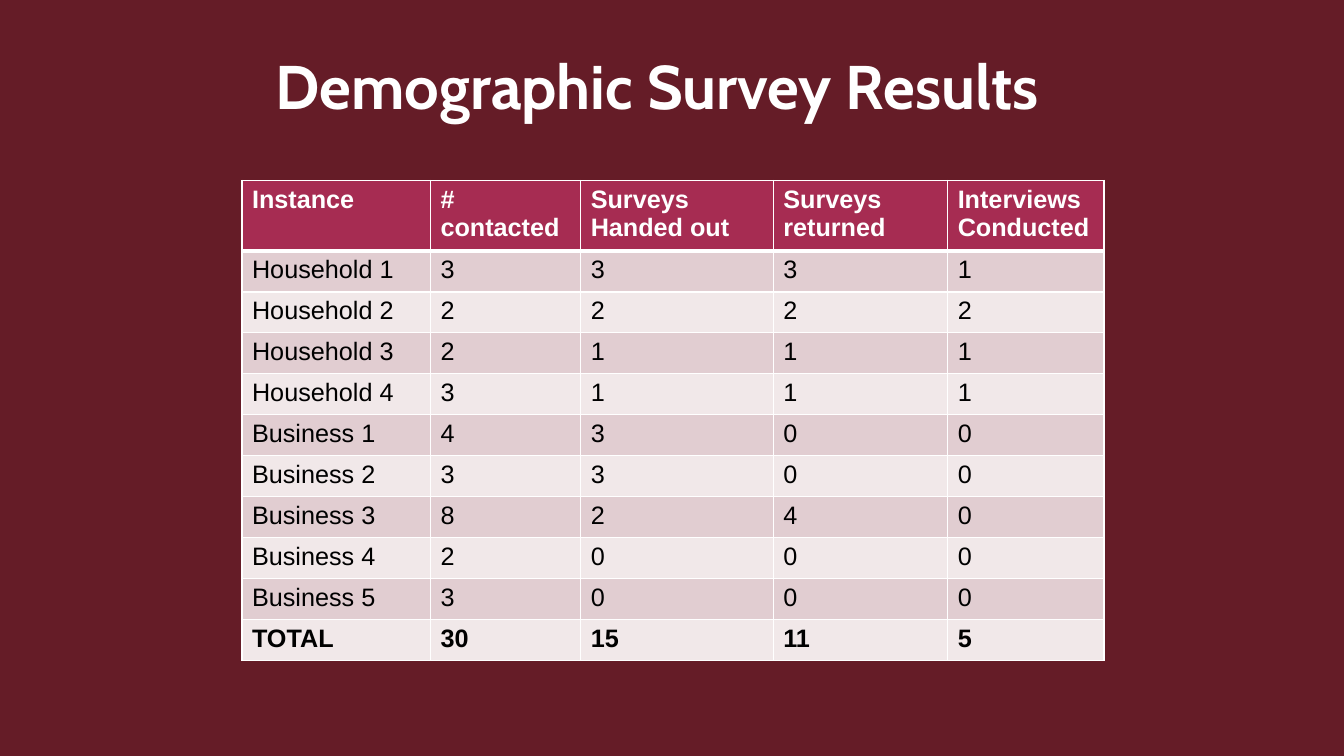
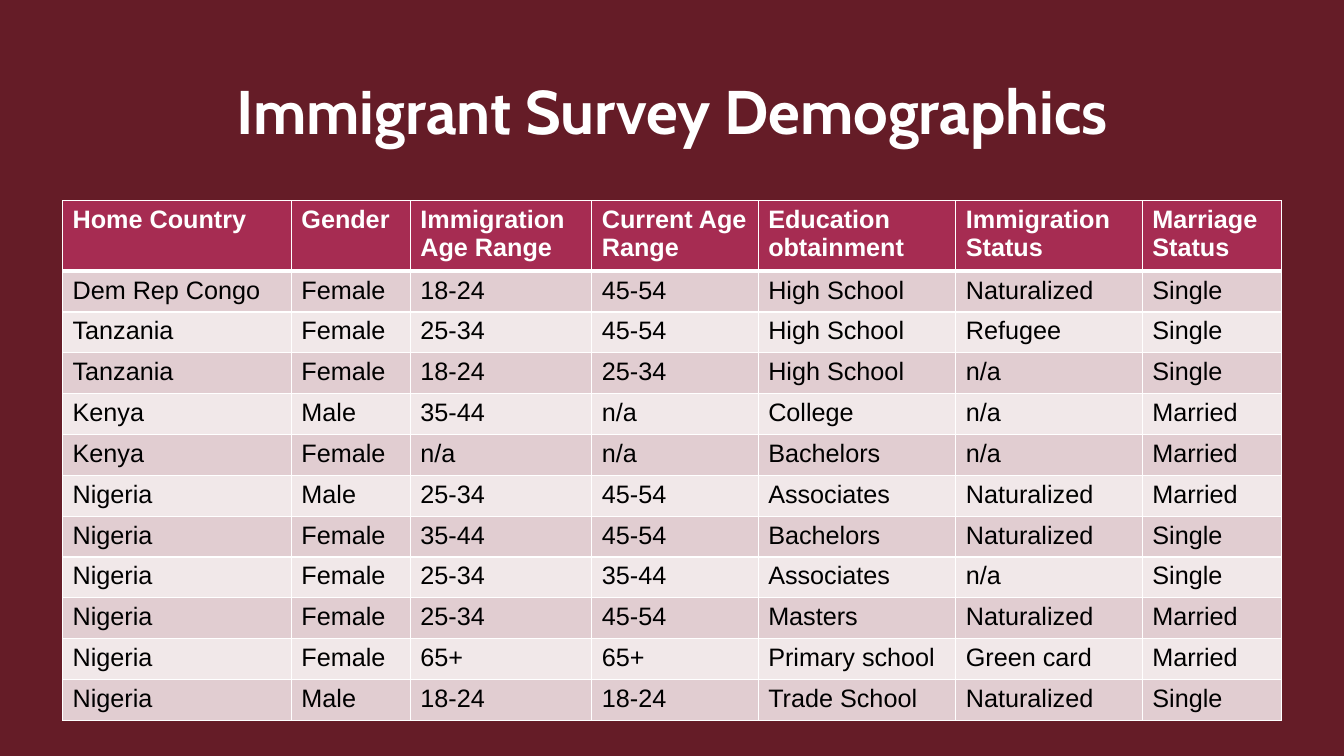
from dataclasses import dataclass

from lxml import etree
from pptx import Presentation
from pptx.dml.color import RGBColor
from pptx.enum.text import MSO_ANCHOR, PP_ALIGN
from pptx.oxml.ns import qn
from pptx.slide import Slide
from pptx.table import _Cell as Cell
from pptx.util import Inches, Pt

BURGUNDY = RGBColor(0x65, 0x1C, 0x27)
CRIMSON = RGBColor(0xA6, 0x2C, 0x52)
ROSE = RGBColor(0xE1, 0xCD, 0xD1)
PALE_ROSE = RGBColor(0xF1, 0xE8, 0xE9)
WHITE = RGBColor(0xFF, 0xFF, 0xFF)
BLACK = RGBColor(0x00, 0x00, 0x00)

TITLE_FONT = "Cabin"
TABLE_FONT = "Arial"
TITLE_WIDTH, TITLE_HEIGHT = 10, 0.86
HEADER_HEIGHT = 0.67
THIN, THICK = Pt(1), Pt(3)


@dataclass(frozen=True)
class TableSlide:
    title: str
    title_left: float
    title_top: float
    table_left: float
    table_top: float
    table_height: float
    column_widths: tuple[float, ...]
    rows: tuple[tuple[str, ...], ...]
    has_total: bool = False


TABLE_SLIDES = (
    TableSlide(
        title="Demographic Survey Results",
        title_left=1.52,
        title_top=0.4,
        table_left=2.4,
        table_top=1.79,
        table_height=4.73,
        column_widths=(1.87, 1.49, 1.91, 1.73, 1.55),
        rows=(
            ("Instance", "# contacted", "Surveys Handed out", "Surveys returned", "Interviews Conducted"),
            ("Household 1", "3", "3", "3", "1"),
            ("Household 2", "2", "2", "2", "2"),
            ("Household 3", "2", "1", "1", "1"),
            ("Household 4", "3", "1", "1", "1"),
            ("Business 1", "4", "3", "0", "0"),
            ("Business 2", "3", "3", "0", "0"),
            ("Business 3", "8", "2", "4", "0"),
            ("Business 4", "2", "0", "0", "0"),
            ("Business 5", "3", "0", "0", "0"),
            ("TOTAL", "30", "15", "11", "5"),
        ),
        has_total=True,
    ),
    TableSlide(
        title="Immigrant Survey Demographics",
        title_left=1.67,
        title_top=0.65,
        table_left=0.62,
        table_top=1.99,
        table_height=5.13,
        column_widths=(2.27, 1.18, 1.8, 1.65, 1.96, 1.85, 1.38),
        rows=(
            ("Home Country", "Gender", "Immigration Age Range", "Current Age Range",
             "Education obtainment", "Immigration Status", "Marriage Status"),
            ("Dem Rep Congo", "Female", "18-24", "45-54", "High School", "Naturalized", "Single"),
            ("Tanzania", "Female", "25-34", "45-54", "High School", "Refugee", "Single"),
            ("Tanzania", "Female", "18-24", "25-34", "High School", "n/a", "Single"),
            ("Kenya", "Male", "35-44", "n/a", "College", "n/a", "Married"),
            ("Kenya", "Female", "n/a", "n/a", "Bachelors", "n/a", "Married"),
            ("Nigeria", "Male", "25-34", "45-54", "Associates", "Naturalized", "Married"),
            ("Nigeria", "Female", "35-44", "45-54", "Bachelors", "Naturalized", "Single"),
            ("Nigeria", "Female", "25-34", "35-44", "Associates", "n/a", "Single"),
            ("Nigeria", "Female", "25-34", "45-54", "Masters", "Naturalized", "Married"),
            ("Nigeria", "Female", "65+", "65+", "Primary school", "Green card", "Married"),
            ("Nigeria", "Male", "18-24", "18-24", "Trade School", "Naturalized", "Single"),
        ),
    ),
)


def add_title(slide: Slide, content: TableSlide) -> None:
    shape = slide.shapes.add_textbox(
        Inches(content.title_left), Inches(content.title_top), Inches(TITLE_WIDTH), Inches(TITLE_HEIGHT)
    )
    text_frame = shape.text_frame
    text_frame.word_wrap = True
    text_frame.vertical_anchor = MSO_ANCHOR.BOTTOM
    text_frame.text = content.title
    paragraph = text_frame.paragraphs[0]
    paragraph.alignment = PP_ALIGN.CENTER
    font = paragraph.runs[0].font
    font.name, font.size, font.bold = TITLE_FONT, Pt(44), True
    font.color.rgb = WHITE


def set_borders(cell: Cell, top: int, bottom: int) -> None:
    """Draw white borders; call before filling, as the schema puts lines first."""
    properties = cell._tc.get_or_add_tcPr()
    for tag, width in (("a:lnL", THIN), ("a:lnR", THIN), ("a:lnT", top), ("a:lnB", bottom)):
        line = etree.SubElement(properties, qn(tag), w=str(int(width)))
        fill = etree.SubElement(line, qn("a:solidFill"))
        etree.SubElement(fill, qn("a:srgbClr"), val=str(WHITE))


def format_cell(cell: Cell, text: str, row_index: int, bold: bool) -> None:
    is_header = row_index == 0
    set_borders(cell, THICK if row_index == 1 else THIN, THICK if is_header else THIN)
    cell.fill.solid()
    cell.fill.fore_color.rgb = CRIMSON if is_header else (PALE_ROSE, ROSE)[row_index % 2]
    cell.text_frame.text = text
    font = cell.text_frame.paragraphs[0].runs[0].font
    font.name, font.size, font.bold = TABLE_FONT, Pt(18), bold
    font.color.rgb = WHITE if is_header else BLACK


def add_survey_table(slide: Slide, content: TableSlide) -> None:
    row_count, column_count = len(content.rows), len(content.column_widths)
    table = slide.shapes.add_table(
        row_count, column_count,
        Inches(content.table_left), Inches(content.table_top),
        Inches(sum(content.column_widths)), Inches(content.table_height),
    ).table
    for column, width in zip(table.columns, content.column_widths):
        column.width = Inches(width)
    body_height = (content.table_height - HEADER_HEIGHT) / (row_count - 1)
    for row_index, texts in enumerate(content.rows):
        is_header = row_index == 0
        is_total = content.has_total and row_index == row_count - 1
        table.rows[row_index].height = Inches(HEADER_HEIGHT if is_header else body_height)
        for column_index, text in enumerate(texts):
            format_cell(table.cell(row_index, column_index), text, row_index, is_header or is_total)


def main() -> None:
    presentation = Presentation()
    presentation.slide_width, presentation.slide_height = Inches(13.33), Inches(7.5)
    blank_layout = presentation.slide_layouts[6]
    for content in TABLE_SLIDES:
        slide = presentation.slides.add_slide(blank_layout)
        slide.background.fill.solid()
        slide.background.fill.fore_color.rgb = BURGUNDY
        add_title(slide, content)
        add_survey_table(slide, content)
    presentation.save("out.pptx")


if __name__ == "__main__":
    main()
